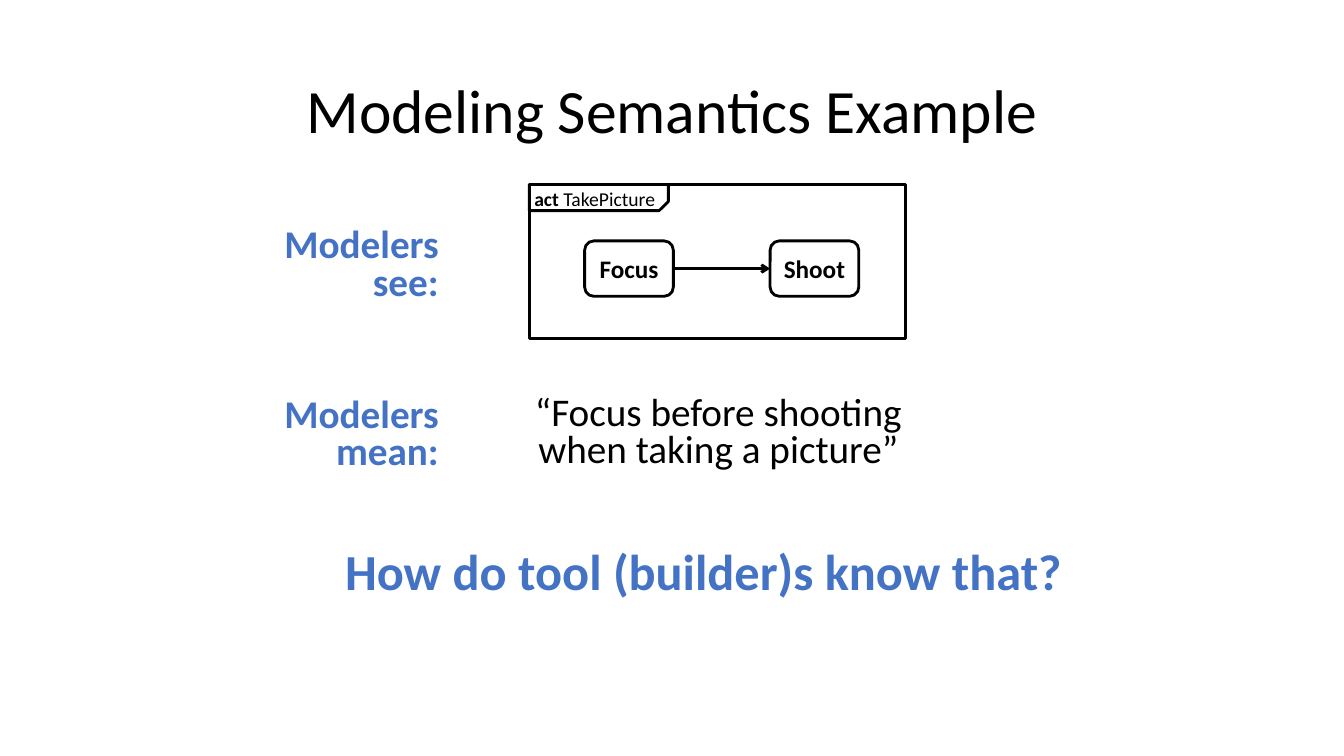
from lxml import etree
from pptx import Presentation
from pptx.dml.color import RGBColor
from pptx.enum.shapes import MSO_CONNECTOR, MSO_SHAPE
from pptx.enum.text import MSO_ANCHOR, PP_ALIGN
from pptx.oxml.ns import qn
from pptx.util import Inches, Pt

LEFT, CENTER, RIGHT = PP_ALIGN.LEFT, PP_ALIGN.CENTER, PP_ALIGN.RIGHT
TOP, MIDDLE = MSO_ANCHOR.TOP, MSO_ANCHOR.MIDDLE
RECT, SNIPPED, ROUNDED = MSO_SHAPE.RECTANGLE, MSO_SHAPE.SNIP_1_RECTANGLE, MSO_SHAPE.ROUNDED_RECTANGLE

THEME = {
    "font": "Calibri",
    "ink": RGBColor(0x00, 0x00, 0x00),
    "accent": RGBColor(0x44, 0x72, 0xC4),
    "paper": RGBColor(0xFF, 0xFF, 0xFF),
    "title": Pt(44), "question": Pt(36), "body": Pt(28),
    "action": Pt(18), "tab": Pt(14), "line": Pt(2),
}

prs = Presentation()
prs.slide_width, prs.slide_height = Inches(13.333), Inches(7.5)
slide = prs.slides.add_slide(prs.slide_layouts[6])

# Grid of 100 columns and 100 rows
COL, ROW = prs.slide_width / 100, prs.slide_height / 100


def add_text(text, area, size, shape=None, bold_part=None, color=THEME["ink"], align=CENTER,
             anchor=TOP, spacing=1.0, margins=(0.1, 0.05, 0.1, 0.05)):
    """Write text into a shape, or into a new text box; bold_part is the bold start of it."""
    if shape is None:
        x, y, w, h = area
        shape = slide.shapes.add_textbox(int(x * COL), int(y * ROW), int(w * COL), int(h * ROW))
    frame = shape.text_frame
    frame.word_wrap, frame.vertical_anchor = True, anchor
    frame.margin_left, frame.margin_top, frame.margin_right, frame.margin_bottom = map(Inches, margins)
    paragraph = frame.paragraphs[0]
    paragraph.alignment, paragraph.line_spacing = align, spacing
    bold_part = bold_part or ""
    for words, bold in ((bold_part, True), (text[len(bold_part):], False)):
        if words:
            run = paragraph.add_run()
            run.text = words
            run.font.name, run.font.size, run.font.bold = THEME["font"], size, bold
            run.font.color.rgb = color


def add_outline(kind, area, fill=None):
    x, y, w, h = area
    shape = slide.shapes.add_shape(kind, int(x * COL), int(y * ROW), int(w * COL), int(h * ROW))
    shape.shadow.inherit = False
    if fill is None:
        shape.fill.background()
    else:
        shape.fill.solid()
        shape.fill.fore_color.rgb = fill
    shape.line.color.rgb, shape.line.width = THEME["ink"], THEME["line"]
    return shape


# Title
add_text("Modeling Semantics Example", (6.9, 5.33, 86.25, 19.33), THEME["title"],
         anchor=MIDDLE, spacing=0.9)

# Activity frame with its name tab
frame_x, frame_y = 39.38, 24.4
frame_area = (frame_x, frame_y, 27.98, 20.4)
activity = add_outline(RECT, frame_area)
add_text("act TakePicture", frame_area, THEME["tab"], shape=activity, bold_part="act ",
         align=LEFT, margins=(0.05, 0.02, 0.1, 0.05))
name_tab = add_outline(SNIPPED, (frame_x, frame_y, 10.35, 3.47))
name_tab.adjustments[0] = 0.352
name_tab._element.spPr.find(qn("a:xfrm")).set("flipV", "1")

# Actions
action_y, action_w, action_h = 31.87, 6.6, 7.33
focus_x, shoot_x = 43.5, 57.3
for action, x in (("Focus", focus_x), ("Shoot", shoot_x)):
    area = (x, action_y, action_w, action_h)
    box = add_outline(ROUNDED, area, THEME["paper"])
    add_text(action, area, THEME["action"], shape=box, bold_part=action, anchor=MIDDLE)

# Control flow from Focus to Shoot
flow_y = int((action_y + action_h / 2) * ROW)
flow = slide.shapes.add_connector(MSO_CONNECTOR.STRAIGHT, int((focus_x + action_w) * COL), flow_y,
                                  int(shoot_x * COL), flow_y)
flow.line.color.rgb, flow.line.width = THEME["ink"], THEME["line"]
etree.SubElement(flow.line._get_or_add_ln(), qn("a:tailEnd"), type="arrow")
etree.SubElement(flow._element.spPr, qn("a:effectLst"))

# Row labels, sharing one right edge
label_right, label_h = 33.38, 11.47
for label, y, width in (("Modelers see:", 29.6, 13.58), ("Modelers mean:", 52, 20.78)):
    add_text(label, (label_right - width, y, width, label_h), THEME["body"], bold_part=label,
             color=THEME["accent"], align=RIGHT, spacing=0.8)

# Meaning and closing question
add_text("“Focus before shooting when taking a picture”", (37.88, 51.73, 31.13, label_h),
         THEME["body"], spacing=0.8)
question = "How do tool (builder)s know that?"
add_text(question, (24.08, 72.4, 56.55, 8), THEME["question"], bold_part=question,
         color=THEME["accent"], spacing=0.8)

prs.save("out.pptx")
